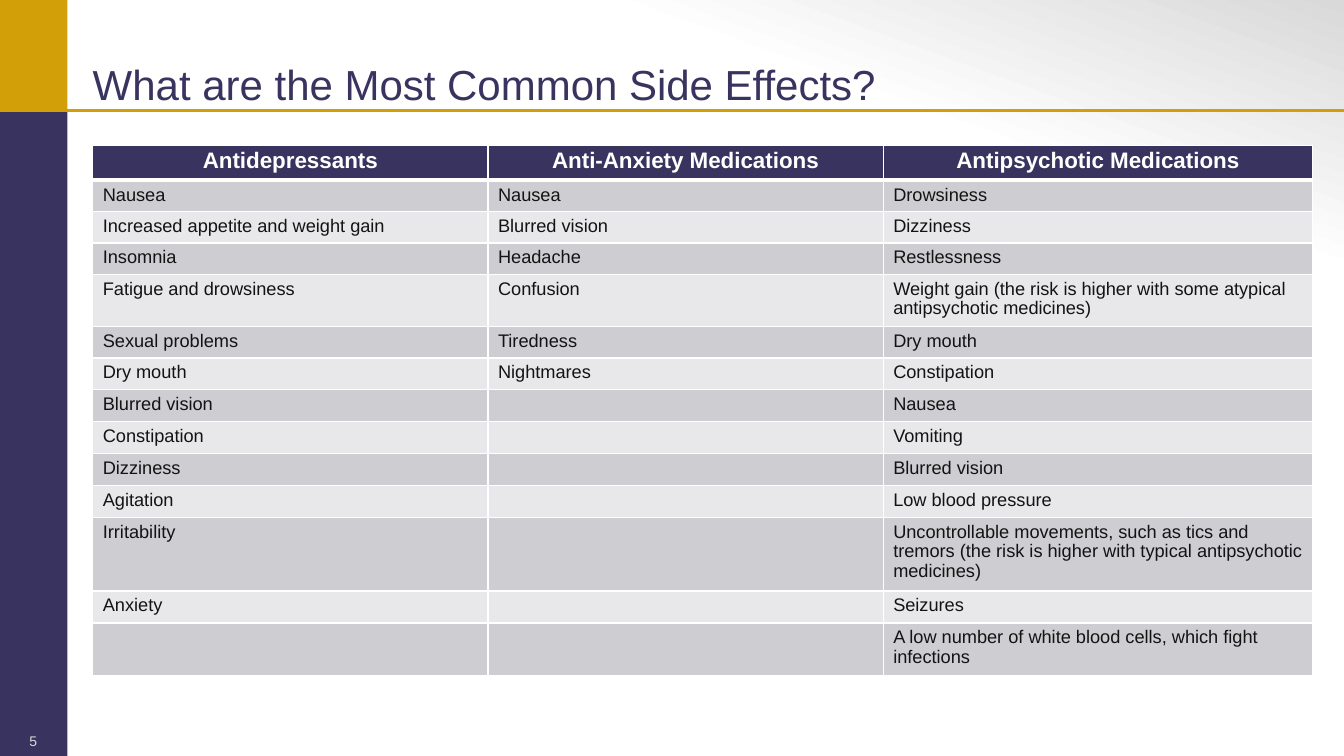
from dataclasses import dataclass

from lxml import etree
from pptx import Presentation
from pptx.dml.color import RGBColor
from pptx.enum.shapes import MSO_CONNECTOR, MSO_SHAPE
from pptx.enum.text import MSO_ANCHOR, PP_ALIGN
from pptx.oxml.ns import qn
from pptx.util import Inches, Pt

RECTANGLE = MSO_SHAPE.RECTANGLE
STRAIGHT = MSO_CONNECTOR.STRAIGHT
LEFT, CENTER = PP_ALIGN.LEFT, PP_ALIGN.CENTER
MIDDLE, BOTTOM = MSO_ANCHOR.MIDDLE, MSO_ANCHOR.BOTTOM

WIDTH, HEIGHT = 13.33, 7.5
SIDEBAR_WIDTH, RULE_TOP = 0.67, 1.1
COLUMN_WIDTHS = [3.92, 3.92, 4.26]
HEADER_HEIGHT, LINE_HEIGHT, ROW_PADDING = 0.33, 0.2, 0.1

MEDICATIONS = ["Antidepressants", "Anti-Anxiety Medications", "Antipsychotic Medications"]
# Each row: the number of text lines, then one side effect per medication.
SIDE_EFFECTS = [
    (1, "Nausea", "Nausea", "Drowsiness"),
    (1, "Increased appetite and weight gain", "Blurred vision", "Dizziness"),
    (1, "Insomnia", "Headache", "Restlessness"),
    (2, "Fatigue and drowsiness", "Confusion",
     "Weight gain (the risk is higher with some atypical antipsychotic medicines)"),
    (1, "Sexual problems", "Tiredness", "Dry mouth"),
    (1, "Dry mouth", "Nightmares", "Constipation"),
    (1, "Blurred vision", "", "Nausea"),
    (1, "Constipation", "", "Vomiting"),
    (1, "Dizziness", "", "Blurred vision"),
    (1, "Agitation", "", "Low blood pressure"),
    (3, "Irritability", "",
     "Uncontrollable movements, such as tics and tremors "
     "(the risk is higher with typical antipsychotic medicines)"),
    (1, "Anxiety", "", "Seizures"),
    (2, "", "", "A low number of white blood cells, which fight infections"),
]


@dataclass(frozen=True)
class Theme:
    font: str = "Arial"
    navy: str = "39345F"
    gold: str = "D39F08"
    white: str = "FFFFFF"
    grey: str = "D9D9D9"
    ink: str = "141313"
    bands: tuple = ("CECED2", "E8E8EA")
    title_size: float = 30
    header_size: float = 16
    body_size: float = 13
    number_size: float = 10


def rgb(value):
    return RGBColor.from_string(value)


def apply_format(target, values):
    for attribute, value in values.items():
        setattr(target, attribute, value)


class SlideBuilder:
    def __init__(self, slide, theme):
        self.slide = slide
        self.theme = theme

    def rectangle(self, left, top, width, height, color=None):
        block = self.slide.shapes.add_shape(
            RECTANGLE, Inches(left), Inches(top), Inches(width), Inches(height))
        block.shadow.inherit = False
        block.line.fill.background()
        if color:
            block.fill.solid()
            block.fill.fore_color.rgb = rgb(color)
        return block

    def backdrop(self):
        fill = self.rectangle(0, 0, WIDTH, HEIGHT).fill
        fill.gradient()
        fill.gradient_angle = 70
        stops = [(0.78, self.theme.white), (1, self.theme.grey)]
        for stop, (position, color) in zip(fill.gradient_stops, stops):
            stop.position = position
            stop.color.rgb = rgb(color)

    def rule(self, left, right, top, color, weight):
        rule = self.slide.shapes.add_connector(
            STRAIGHT, Inches(left), Inches(top), Inches(right), Inches(top))
        rule.line.color.rgb = rgb(color)
        rule.line.width = Pt(weight)
        etree.SubElement(rule._element.spPr, qn("a:effectLst"))

    def fill_text(self, frame, text, size, color, bold=False, align=LEFT, spacing=1.0):
        paragraph = frame.paragraphs[0]
        apply_format(paragraph, {"alignment": align, "line_spacing": spacing})
        if text:
            styled = paragraph.add_run()
            styled.text = text
            font = styled.font
            apply_format(font, {"name": self.theme.font, "size": Pt(size), "bold": bold})
            font.color.rgb = rgb(color)
        else:
            # An empty cell still needs the type size, or its row grows.
            etree.SubElement(paragraph._p, qn("a:endParaRPr"), sz=str(size * 100))

    def text(self, left, top, width, height, text, size, color, anchor, **style):
        box = self.slide.shapes.add_textbox(
            Inches(left), Inches(top), Inches(width), Inches(height))
        apply_format(box.text_frame, {
            "word_wrap": True, "vertical_anchor": anchor,
            "margin_left": 0, "margin_right": 0, "margin_top": 0, "margin_bottom": 0})
        self.fill_text(box.text_frame, text, size, color, **style)

    def borders(self, cell, weights):
        """Draw white cell edges; weights maps L, R, T and B to points."""
        properties = cell._tc.get_or_add_tcPr()
        for index, (edge, weight) in enumerate(weights.items()):
            line = etree.Element(qn(f"a:ln{edge}"), w=str(Pt(weight)))
            solid = etree.SubElement(line, qn("a:solidFill"))
            etree.SubElement(solid, qn("a:srgbClr"), val=self.theme.white)
            properties.insert(index, line)

    def cell(self, cell, text, fill, weights, **style):
        cell.fill.solid()
        cell.fill.fore_color.rgb = rgb(fill)
        self.borders(cell, weights)
        self.fill_text(cell.text_frame, text, **style)

    def table(self, left, top, headings, rows):
        theme = self.theme
        heights = [HEADER_HEIGHT] + [ROW_PADDING + LINE_HEIGHT * lines for lines, *_ in rows]
        table = self.slide.shapes.add_table(
            len(heights), len(headings), Inches(left), Inches(top),
            Inches(sum(COLUMN_WIDTHS)), Inches(sum(heights))).table
        for column, width in zip(table.columns, COLUMN_WIDTHS):
            column.width = Inches(width)
        for row, height in zip(table.rows, heights):
            row.height = Inches(height)

        header_style = {"size": theme.header_size, "color": theme.white,
                        "bold": True, "align": CENTER, "spacing": 0.93}
        body_style = {"size": theme.body_size, "color": theme.ink, "spacing": 0.97}
        for column, heading in enumerate(headings):
            self.cell(table.cell(0, column), heading, theme.navy,
                      {"L": 1, "R": 1, "T": 1, "B": 3}, **header_style)
        for row, (_, *effects) in enumerate(rows, start=1):
            edges = {"L": 1, "R": 1, "T": 3 if row == 1 else 1, "B": 1}
            for column, effect in enumerate(effects):
                self.cell(table.cell(row, column), effect,
                          theme.bands[(row - 1) % 2], edges, **body_style)


def main():
    presentation = Presentation()
    presentation.slide_width = Inches(WIDTH)
    presentation.slide_height = Inches(HEIGHT)
    theme = Theme()
    builder = SlideBuilder(
        presentation.slides.add_slide(presentation.slide_layouts[6]), theme)

    builder.backdrop()
    builder.rectangle(0, 0, SIDEBAR_WIDTH, RULE_TOP, theme.gold)
    builder.rectangle(0, RULE_TOP, SIDEBAR_WIDTH, HEIGHT - RULE_TOP, theme.navy)
    builder.rule(0, WIDTH, RULE_TOP, theme.gold, 2)
    builder.text(0, 7.2, 0.66, 0.3, "5", theme.number_size, theme.grey,
                 MIDDLE, align=CENTER)
    builder.text(0.92, 0.06, 11.74, 1.03, "What are the Most Common Side Effects?",
                 theme.title_size, theme.navy, BOTTOM, spacing=0.9)
    builder.table(0.92, 1.44, MEDICATIONS, SIDE_EFFECTS)
    presentation.save("out.pptx")


if __name__ == "__main__":
    main()
